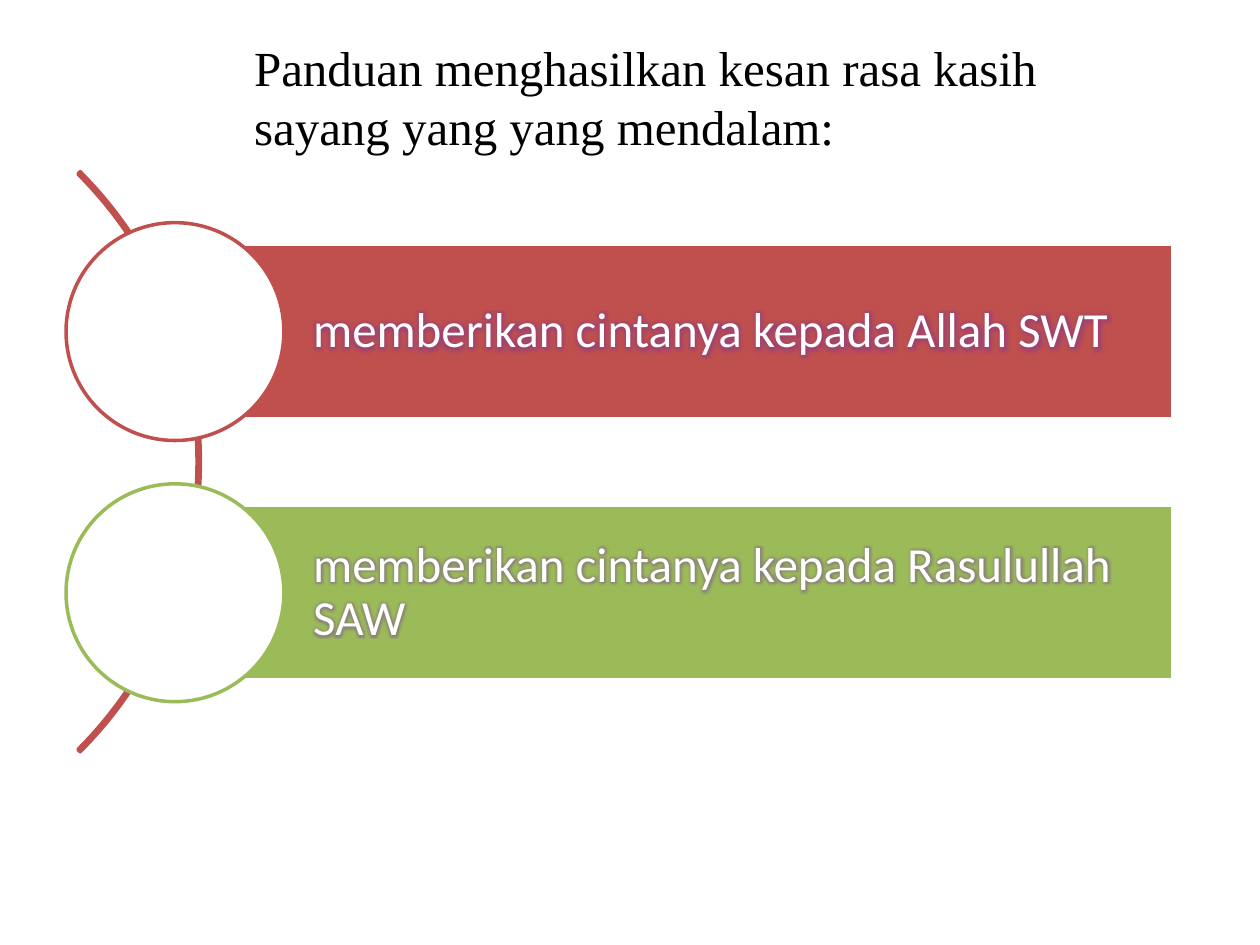
"""Build a slide with two guidance bars strung along an arc."""
from lxml import etree
from pptx import Presentation
from pptx.dml.color import RGBColor
from pptx.enum.shapes import MSO_SHAPE
from pptx.enum.text import MSO_ANCHOR, MSO_AUTO_SIZE, PP_ALIGN
from pptx.oxml.ns import qn
from pptx.util import Pt

ARC, BAR, CIRCLE = MSO_SHAPE.BLOCK_ARC, MSO_SHAPE.RECTANGLE, MSO_SHAPE.OVAL
LEFT, TOP, MIDDLE = PP_ALIGN.LEFT, MSO_ANCHOR.TOP, MSO_ANCHOR.MIDDLE
NO_FIT = MSO_AUTO_SIZE.NONE

THEME = {
    "white": RGBColor(0xFF, 0xFF, 0xFF),
    "black": RGBColor(0, 0, 0),
    "red": RGBColor(0xC0, 0x50, 0x4D),
    "green": RGBColor(0x9B, 0xBB, 0x59),
    "glow": "7030A0",
    "size": Pt(28),
    "line": Pt(2),
    "title_font": "Times New Roman",
    "bar_font": "Calibri",
}


def add_part(kind, box, fill, line):
    part = slide.shapes.add_shape(kind, *map(Pt, box))
    part.shadow.inherit = False
    if fill is None:
        part.fill.background()
    else:
        part.fill.solid()
        part.fill.fore_color.rgb = fill
    part.line.color.rgb = line
    part.line.width = THEME["line"]
    return part


def set_text(frame, text, frame_format, font_name, color):
    for name, value in frame_format.items():
        setattr(frame, name, value)
    paragraph = frame.paragraphs[0]
    paragraph.alignment = LEFT
    run = paragraph.add_run()
    run.text = text
    for name, value in {"name": font_name, "size": THEME["size"]}.items():
        setattr(run.font, name, value)
    run.font.color.rgb = color
    return paragraph


prs = Presentation()
prs.slide_width, prs.slide_height = Pt(720), Pt(540)
slide = prs.slides.add_slide(prs.slide_layouts[5])

heading = slide.shapes.title
heading_box = {"left": Pt(138), "top": Pt(18), "width": Pt(540), "height": Pt(75)}
for name, value in heading_box.items():
    setattr(heading, name, value)
set_text(
    heading.text_frame,
    "Panduan menghasilkan kesan rasa kasih sayang yang yang mendalam:",
    {"word_wrap": True, "auto_size": NO_FIT, "vertical_anchor": TOP},
    THEME["title_font"],
    THEME["black"],
)

arc = add_part(ARC, (-354.25, 29.5, 468.75, 468.75), None, THEME["red"])
for index, value in enumerate((189, 27, 0.004)):
    arc.adjustments[index] = value

bar_format = {
    "word_wrap": True,
    "auto_size": NO_FIT,
    "vertical_anchor": MIDDLE,
    "margin_left": Pt(79),
    "margin_right": Pt(5.6),
    "margin_top": Pt(5.6),
    "margin_bottom": Pt(5.6),
}
guides = [
    ("memberikan cintanya kepada Allah SWT", THEME["red"]),
    ("memberikan cintanya kepada Rasulullah SAW", THEME["green"]),
]
first_center, step = 189.5, 149.25
bar_height, diameter = 99.5, 124.5

for row, (guide, color) in enumerate(guides):
    center = first_center + row * step
    bar_box = (100, center - bar_height / 2, 570, bar_height)
    bar = add_part(BAR, bar_box, color, THEME["white"])
    paragraph = set_text(
        bar.text_frame, guide, bar_format, THEME["bar_font"], THEME["white"]
    )
    paragraph.line_spacing = 0.9
    effects = etree.Element(qn("a:effectLst"))
    glow = etree.SubElement(effects, qn("a:glow"), rad=str(Pt(5)))
    tint = etree.SubElement(glow, qn("a:srgbClr"), val=THEME["glow"])
    etree.SubElement(tint, qn("a:alpha"), val="40000")
    run_properties = paragraph.runs[0].font._element
    run_properties.find(qn("a:solidFill")).addnext(effects)
    circle_box = (37.75, center - diameter / 2, diameter, diameter)
    add_part(CIRCLE, circle_box, THEME["white"], color)

prs.save("out.pptx")
